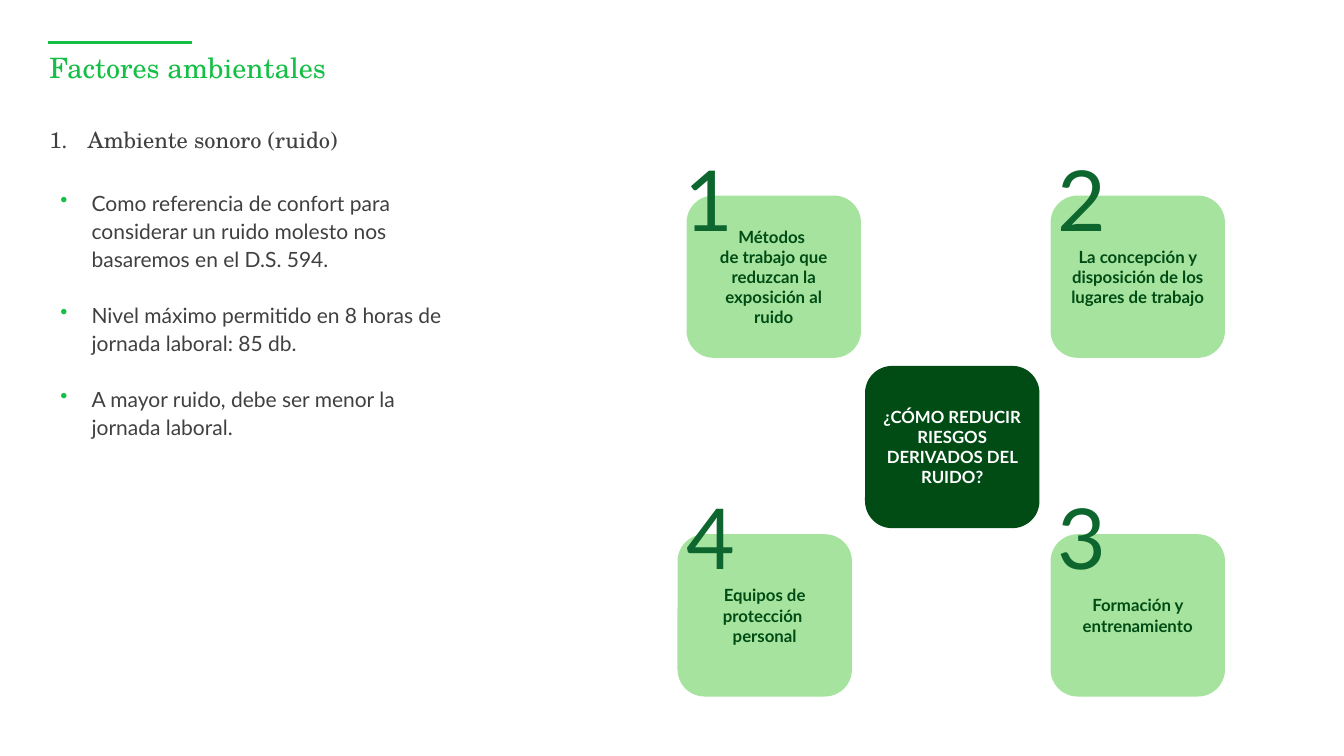
from dataclasses import dataclass

from lxml import etree
from pptx import Presentation
from pptx.dml.color import RGBColor
from pptx.enum.shapes import MSO_CONNECTOR, MSO_SHAPE
from pptx.enum.text import MSO_ANCHOR, PP_ALIGN
from pptx.oxml.ns import qn
from pptx.util import Pt

EMU_PER_PX = 9144  # 100 px to the inch
ROUNDED = MSO_SHAPE.ROUNDED_RECTANGLE
STRAIGHT = MSO_CONNECTOR.STRAIGHT
MIDDLE, CENTER = MSO_ANCHOR.MIDDLE, PP_ALIGN.CENTER

SANS, SERIF = "Lato", "TeX Gyre Schola"
GREEN, DARK, GRAY, WHITE = "15BF45", "004C14", "404040", "FFFFFF"
PALE, BULLET, NUMBER = "81D877", "13C045", "0D662E"
CARD_W, CARD_H = 173, 161
NUMBER_W, NUMBER_H, NUMBER_RISE = 290, 111, 53


@dataclass
class Style:
    font: str
    size: int
    color: str
    bold: bool = False


@dataclass
class Card:
    left: int
    top: int
    lines: list[str]
    number: str
    number_left: int


TITLE = Style(SERIF, 20, GREEN)
SUBTITLE = Style(SERIF, 16, GRAY)
BODY = Style(SANS, 15, GRAY)
CARD_TEXT = Style(SANS, 12, DARK, True)
HUB_TEXT = Style(SANS, 12, WHITE, True)
BIG_NUMBER = Style(SANS, 60, NUMBER)

CARDS = [
    Card(1042, 530, ["Formación y entrenamiento"], "3", 1039),
    Card(672, 530, ["Equipos de protección ", "personal"], "4", 671),
    Card(681, 194, ["Métodos ", "de trabajo que reduzcan la exposición al ruido"], "1", 669),
    Card(1042, 194, ["La concepción y disposición de los lugares de trabajo"], "2", 1039),
]
POINTS = [
    "Como referencia de confort para considerar un ruido molesto nos basaremos en el D.S. 594.",
    "Nivel máximo permitido en 8 horas de jornada laboral: 85 db.",
    "A mayor ruido, debe ser menor la jornada laboral.",
]


def px(n: int) -> int:
    return n * EMU_PER_PX


def rgb(color: str) -> RGBColor:
    return RGBColor.from_string(color)


def write(tf, lines: list[str], style: Style, **formats) -> None:
    """Fill a text frame, one paragraph per line."""
    tf.word_wrap = True
    for i, line in enumerate(lines):
        p = tf.paragraphs[0] if i == 0 else tf.add_paragraph()
        for name, value in formats.items():
            setattr(p, name, value)
        r = p.add_run()
        r.text = line
        for name, value in {"name": style.font, "size": Pt(style.size), "bold": style.bold}.items():
            setattr(r.font, name, value)
        r.font.color.rgb = rgb(style.color)


def add_text(s, left: int, top: int, width: int, height: int,
             lines: list[str], style: Style, inset: bool = True, **formats):
    tf = s.shapes.add_textbox(px(left), px(top), px(width), px(height)).text_frame
    if not inset:
        for side in ("left", "top", "right", "bottom"):
            setattr(tf, f"margin_{side}", 0)
    write(tf, lines, style, **formats)
    return tf


def add_bullet(p, indent: int, color: str, tag: str, **attrs: str) -> None:
    pPr = p._p.get_or_add_pPr()
    pPr.set("marL", str(px(indent)))
    pPr.set("indent", str(-px(indent)))
    bu_color = etree.SubElement(pPr, qn("a:buClr"))
    etree.SubElement(bu_color, qn("a:srgbClr"), val=color)
    etree.SubElement(pPr, qn(tag), **attrs)


def add_card(s, left: int, top: int, lines: list[str], style: Style,
             fill: str, opacity: int = 100) -> None:
    sp = s.shapes.add_shape(ROUNDED, px(left), px(top), px(CARD_W), px(CARD_H))
    sp.shadow.inherit = False
    sp.line.fill.background()
    sp.fill.solid()
    sp.fill.fore_color.rgb = rgb(fill)
    if opacity < 100:
        clr = sp._element.spPr.find(qn("a:solidFill")).find(qn("a:srgbClr"))
        etree.SubElement(clr, qn("a:alpha"), val=str(opacity * 1000))
    sp.text_frame.vertical_anchor = MIDDLE
    write(sp.text_frame, lines, style, alignment=CENTER)


def main() -> None:
    prs = Presentation()
    prs.slide_width, prs.slide_height = px(1333), px(750)
    s = prs.slides.add_slide(prs.slide_layouts[6])

    # Accent line above the title
    line = s.shapes.add_connector(STRAIGHT, px(48), px(42), px(190), px(42))
    line.line.color.rgb = rgb(GREEN)
    line.line.width = Pt(1.75)
    etree.SubElement(line._element.spPr, qn("a:effectLst"))

    # Title and numbered subtitle
    add_text(s, 49, 54, 1079, 57, ["Factores ambientales"], TITLE, False, line_spacing=0.9)
    tf = add_text(s, 49, 128, 1079, 39, ["Ambiente sonoro (ruido)"], SUBTITLE, False,
                  line_spacing=0.9)
    add_bullet(tf.paragraphs[0], 38, GRAY, "a:buAutoNum", type="arabicPeriod")

    # Bulleted points
    tf = add_text(s, 50, 181, 415, 260, POINTS, BODY, line_spacing=Pt(20))
    for i, p in enumerate(tf.paragraphs):
        if i:
            p.space_before = Pt(20)
        add_bullet(p, 31, BULLET, "a:buChar", char="•")

    # Measures around the central question
    for card in CARDS:
        add_card(s, card.left, card.top, card.lines, CARD_TEXT, PALE, 70)
    add_card(s, 858, 363, ["¿CÓMO REDUCIR RIESGOS DERIVADOS DEL RUIDO?"], HUB_TEXT, DARK)

    # Large numbers over the card corners
    for card in CARDS:
        add_text(s, card.number_left, card.top - NUMBER_RISE, NUMBER_W, NUMBER_H,
                 [card.number], BIG_NUMBER)

    prs.save("out.pptx")


if __name__ == "__main__":
    main()
